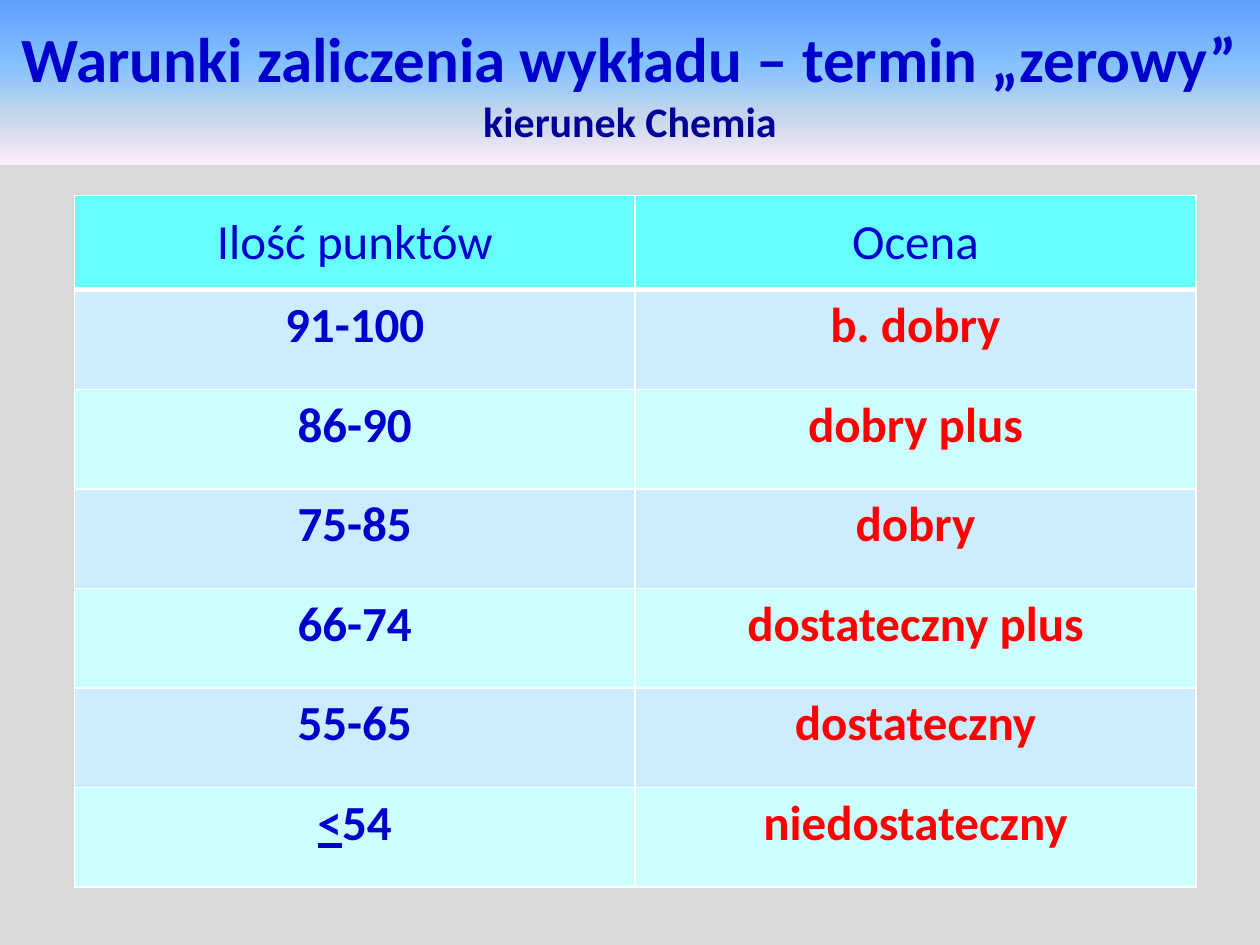
import lxml.etree
import pptx
import pptx.dml.color
import pptx.enum.text
import pptx.oxml.ns
import pptx.util

Inches = pptx.util.Inches
Pt = pptx.util.Pt
ANCHOR = pptx.enum.text.MSO_ANCHOR
CENTER = pptx.enum.text.PP_ALIGN.CENTER
qn = pptx.oxml.ns.qn

BLUE, NAVY, RED = "0000CC", "000099", "FF0000"
HEADER_FILL = "66FFFF"
BAND_FILLS = ("CCECFF", "CCFFFF")
TITLE_GRADIENT = ((0, "5E9EFF"), (40, "85C2FF"), (70, "C4D6EB"), (100, "FFEBFA"))
HEADERS = ("Ilość punktów", "Ocena")
GRADES = (
    ("91-100", "b. dobry"),
    ("86-90", "dobry plus"),
    ("75-85", "dobry"),
    ("66-74", "dostateczny plus"),
    ("55-65", "dostateczny"),
    ("<54", "niedostateczny"),
)


def rgb(value):
    """Return a colour from a hex string."""
    return pptx.dml.color.RGBColor.from_string(value)


class SlideBuilder:
    """Hold the style and the current slide."""

    font = "Calibri"

    def __init__(self, presentation, background):
        """Add a title-only slide with a plain background."""
        self.slide = presentation.slides.add_slide(presentation.slide_layouts[5])
        self.slide.background.fill.solid()
        self.slide.background.fill.fore_color.rgb = rgb(background)

    def format_paragraph(self, paragraph, size, color, bold):
        """Centre a paragraph and style its runs."""
        paragraph.alignment = CENTER
        for run in paragraph.runs:
            run.font.name = self.font
            run.font.size = Pt(size)
            run.font.bold = bold
            run.font.color.rgb = rgb(color)

    def gradient(self, shape, stops):
        """Fill a shape with a gradient from top to bottom."""
        shape.fill.gradient()
        shape.fill.gradient_angle = 270
        stop_list = shape.element.spPr.find(qn("a:gradFill")).find(qn("a:gsLst"))
        for stop in list(stop_list):
            stop_list.remove(stop)
        for position, color in stops:
            stop = lxml.etree.SubElement(stop_list, qn("a:gs"), pos=str(position * 1000))
            lxml.etree.SubElement(stop, qn("a:srgbClr"), val=color)

    def title(self, lines, width, height):
        """Place the title band and write its lines."""
        shape = self.slide.shapes.title
        shape.left, shape.top = Inches(0), Inches(0)
        shape.width, shape.height = Inches(width), Inches(height)
        self.gradient(shape, TITLE_GRADIENT)
        frame = shape.text_frame
        frame.auto_size = pptx.enum.text.MSO_AUTO_SIZE.NONE
        frame.word_wrap = True
        frame.vertical_anchor = ANCHOR.MIDDLE
        frame.text = "\n".join(text for text, size, color in lines)
        for paragraph, (text, size, color) in zip(frame.paragraphs, lines):
            self.format_paragraph(paragraph, size, color, True)

    def borders(self, cell, top, bottom):
        """Draw white borders around a cell."""
        properties = cell._tc.get_or_add_tcPr()
        for side, width in (("L", 1), ("R", 1), ("T", top), ("B", bottom)):
            line = lxml.etree.SubElement(properties, qn(f"a:ln{side}"), w=str(Pt(width)))
            fill = lxml.etree.SubElement(line, qn("a:solidFill"))
            lxml.etree.SubElement(fill, qn("a:srgbClr"), val="FFFFFF")

    def cell(self, cell, text, fill, color, bold, anchor, top=1, bottom=1):
        """Write and style one table cell."""
        self.borders(cell, top, bottom)
        cell.fill.solid()
        cell.fill.fore_color.rgb = rgb(fill)
        cell.vertical_anchor = anchor
        paragraph = cell.text_frame.paragraphs[0]
        if text.startswith("<"):
            sign = paragraph.add_run()
            sign.text = "<"
            sign.font.underline = True
            text = text[1:]
        paragraph.add_run().text = text
        self.format_paragraph(paragraph, 28, color, bold)

    def table(self, left, top, width, header_height, row_height):
        """Add the table of points and grades."""
        height = header_height + row_height * len(GRADES)
        table = self.slide.shapes.add_table(
            len(GRADES) + 1, len(HEADERS),
            Inches(left), Inches(top), Inches(width), Inches(height),
        ).table
        for row in table.rows:
            row.height = Inches(row_height)
        table.rows[0].height = Inches(header_height)
        for column, text in enumerate(HEADERS):
            self.cell(table.cell(0, column), text, HEADER_FILL, BLUE, False,
                      ANCHOR.MIDDLE, bottom=3)
        for index, grade in enumerate(GRADES):
            for column, (text, color) in enumerate(zip(grade, (BLUE, RED))):
                self.cell(table.cell(index + 1, column), text, BAND_FILLS[index % 2],
                          color, True, ANCHOR.TOP, top=1 if index else 3)


def main():
    """Build and save the slide."""
    presentation = pptx.Presentation()
    presentation.slide_width = Inches(10)
    presentation.slide_height = Inches(7.5)
    builder = SlideBuilder(presentation, "D9D9D9")
    builder.title(
        (("Warunki zaliczenia wykładu – termin „zerowy”", 36, BLUE),
         ("kierunek Chemia", 24, NAVY)),
        width=10, height=1.31,
    )
    builder.table(left=0.59, top=1.55, width=8.9, header_height=0.75, row_height=0.79)
    presentation.save("out.pptx")


if __name__ == "__main__":
    main()
